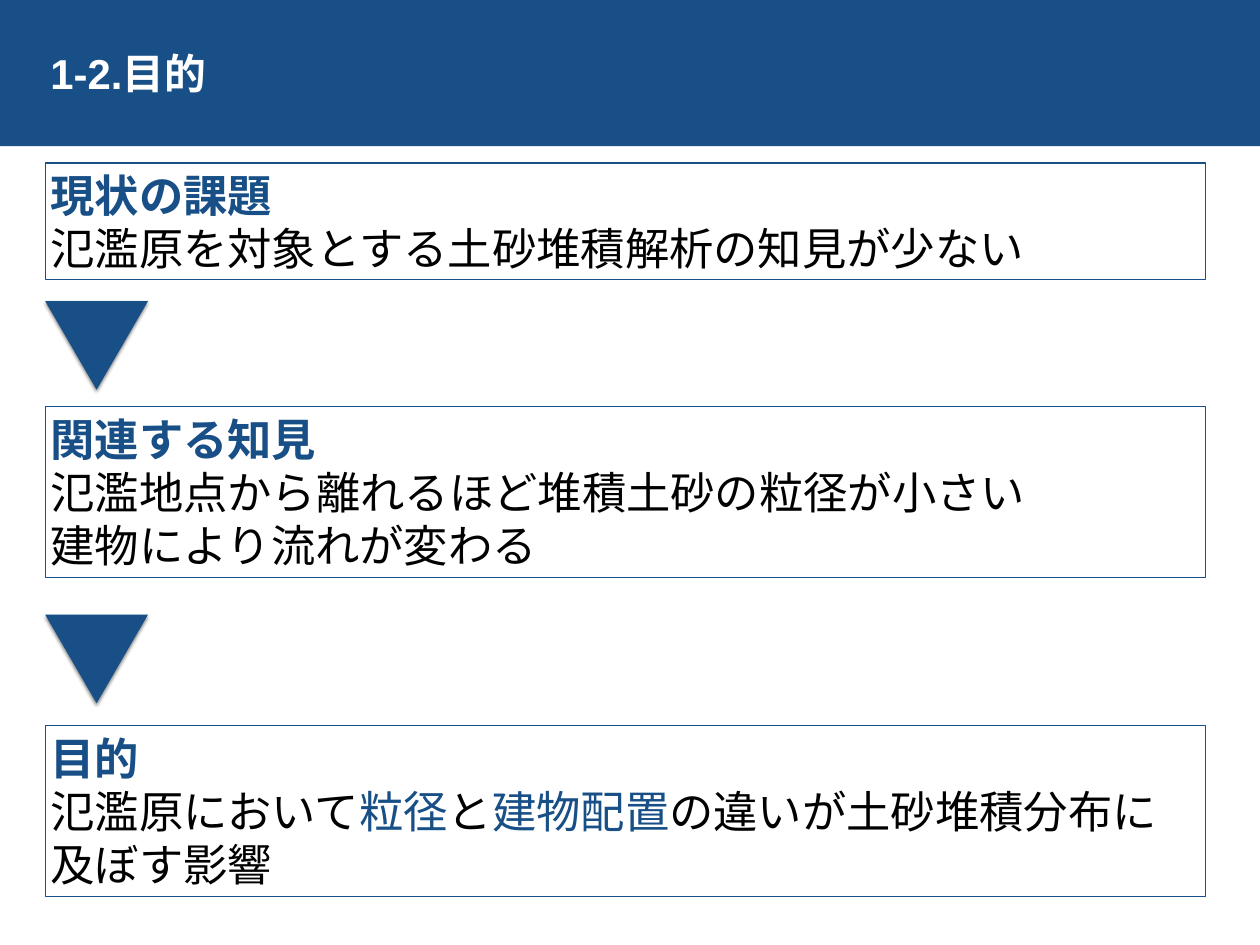
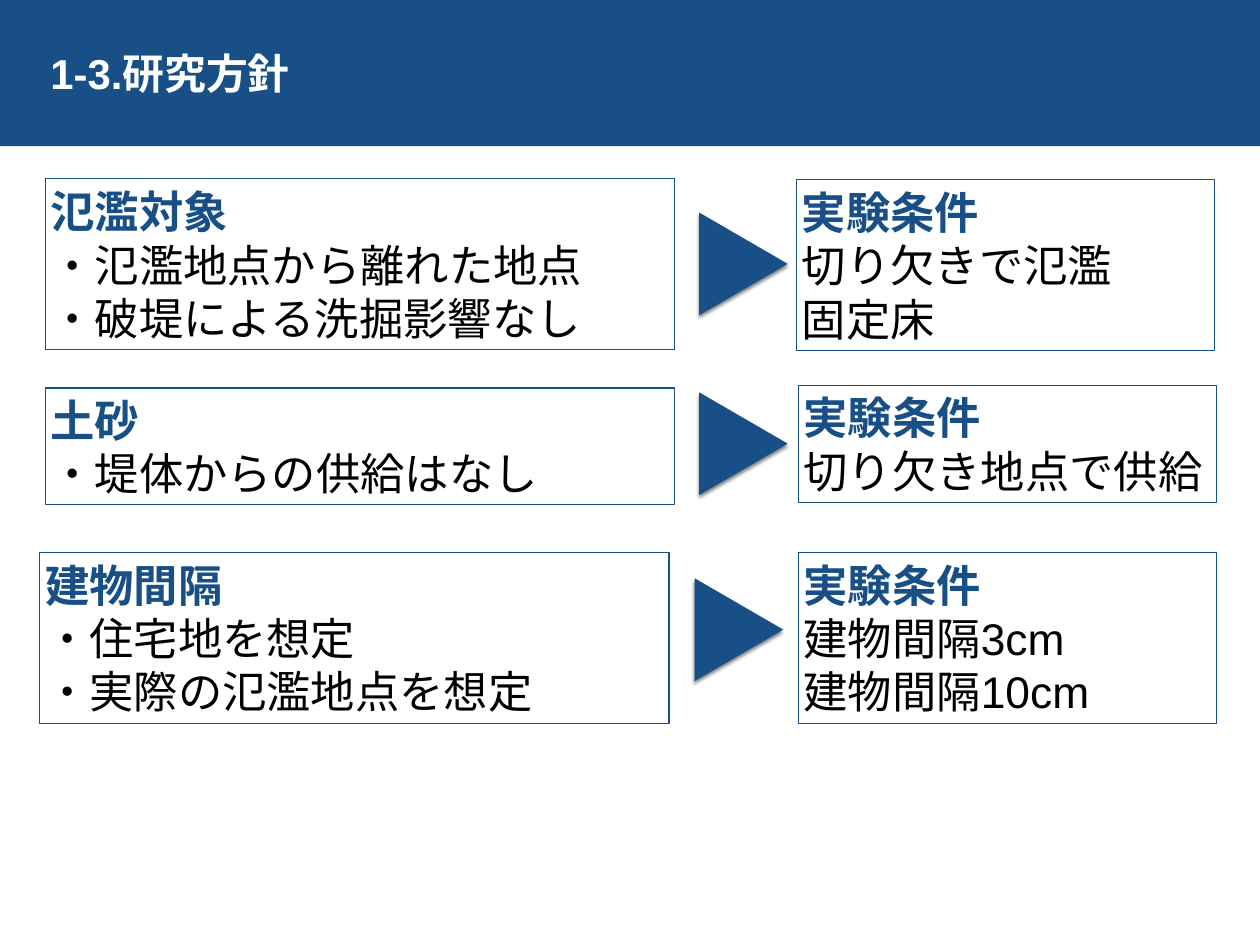
from dataclasses import dataclass

from lxml import etree
from pptx import Presentation
from pptx import util as u
from pptx.dml import color
from pptx.enum import lang, shapes, text
from pptx.oxml import ns, parse_xml

COLORS = {"blue": "174F86", "black": "000000", "white": "FFFFFF"}
FONT = "Arial"
TITLE_SIZE, BODY_SIZE = 34, 36
LEFT = 0.51
INSET = u.Inches(0.06)
DOWN, RIGHT = 180, 90
FRAME_FORMAT = {
    "margin_left": INSET,
    "margin_right": INSET,
    "margin_top": INSET,
    "margin_bottom": INSET,
    "word_wrap": True,
    "vertical_anchor": text.MSO_ANCHOR.MIDDLE,
}
SHADOW = (
    f'<a:effectLst {ns.nsdecls("a")}>'
    '<a:outerShdw blurRad="38100" dist="25400" dir="5400000" rotWithShape="0">'
    '<a:srgbClr val="000000"><a:alpha val="50000"/></a:srgbClr>'
    "</a:outerShdw></a:effectLst>"
)


@dataclass(frozen=True)
class Panel:
    """A framed box; in its lines, words between asterisks are blue."""

    left: float
    top: float
    width: float
    heading: str
    lines: tuple[str, ...]
    rows: int = 3

    @property
    def height(self) -> float:
        return round(0.1 + 0.61 * self.rows, 2)


@dataclass(frozen=True)
class Arrow:
    left: float
    top: float
    rotation: int


PURPOSE_WIDTH, TOPIC_WIDTH, CONDITION_WIDTH = 13.1, 7.1, 4.72
CONDITION = "実験条件"

SLIDES = {
    "1-2.目的": (
        Panel(LEFT, 1.84, PURPOSE_WIDTH, "現状の課題",
              ("氾濫原を対象とする土砂堆積解析の知見が少ない",), 2),
        Arrow(LEFT, 3.4, DOWN),
        Panel(LEFT, 4.59, PURPOSE_WIDTH, "関連する知見",
              ("氾濫地点から離れるほど堆積土砂の粒径が小さい", "建物により流れが変わる")),
        Arrow(LEFT, 6.94, DOWN),
        Panel(LEFT, 8.19, PURPOSE_WIDTH, "目的",
              ("氾濫原において*粒径*と*建物配置*の違いが土砂堆積分布に及ぼす影響",)),
    ),
    "1-3.研究方針": (
        Panel(LEFT, 2.02, TOPIC_WIDTH, "氾濫対象",
              ("・氾濫地点から離れた地点", "・破堤による洗掘影響なし")),
        Panel(8.99, 2.03, CONDITION_WIDTH, CONDITION, ("切り欠きで氾濫", "固定床")),
        Panel(LEFT, 4.38, TOPIC_WIDTH, "土砂", ("・堤体からの供給はなし",), 2),
        Panel(9.01, 4.35, CONDITION_WIDTH, CONDITION, ("切り欠き地点で供給",), 2),
        Arrow(7.81, 2.48, RIGHT),
        Arrow(7.81, 4.51, RIGHT),
        Panel(0.45, 6.24, TOPIC_WIDTH, "建物間隔",
              ("・住宅地を想定", "・実際の氾濫地点を想定")),
        Panel(9.01, 6.24, CONDITION_WIDTH, CONDITION, ("建物間隔3cm", "建物間隔10cm")),
        Arrow(7.76, 6.61, RIGHT),
    ),
}


def rgb(name: str) -> color.RGBColor:
    return color.RGBColor.from_string(COLORS[name])


def add_span(para, words: str, size: int, ink: str, bold: bool) -> None:
    span = para.add_run()
    span.text = words
    values = {
        "name": FONT,
        "size": u.Pt(size),
        "bold": bold,
        "language_id": lang.MSO_LANGUAGE_ID.JAPANESE,
    }
    for key, value in values.items():
        setattr(span.font, key, value)
    span.font.color.rgb = rgb(ink)
    for tag in ("a:ea", "a:cs"):
        etree.SubElement(span.font._element, ns.qn(tag), typeface=FONT)


def add_box(page, left: float, top: float, width: float, height: float):
    box = page.shapes.add_textbox(*map(u.Inches, (left, top, width, height)))
    for key, value in FRAME_FORMAT.items():
        setattr(box.text_frame, key, value)
    return box


def add_solid(page, kind, left: float, top: float, width: float, height: float):
    """Add a blue shape without outline or shadow."""
    solid = page.shapes.add_shape(kind, *map(u.Inches, (left, top, width, height)))
    solid.fill.solid()
    solid.fill.fore_color.rgb = rgb("blue")
    solid.line.fill.background()
    solid.shadow.inherit = False
    return solid


def add_title(page, title: str) -> None:
    add_solid(page, shapes.MSO_SHAPE.RECTANGLE, -0.02, 0, 14.27, 1.65)
    box = add_box(page, LEFT, 0.44, 10.58, 0.76)
    add_span(box.text_frame.paragraphs[0], title, TITLE_SIZE, "white", True)


def draw_panel(page, panel: Panel) -> None:
    box = add_box(page, panel.left, panel.top, panel.width, panel.height)
    box.line.color.rgb = rgb("blue")
    box.line.width = u.Pt(1)
    frame = box.text_frame
    frame.auto_size = text.MSO_AUTO_SIZE.SHAPE_TO_FIT_TEXT
    add_span(frame.paragraphs[0], panel.heading, BODY_SIZE, "blue", True)
    for line in panel.lines:
        para = frame.add_paragraph()
        for index, words in enumerate(line.split("*")):
            add_span(para, words, BODY_SIZE, "blue" if index % 2 else "black", False)


def draw_arrow(page, arrow: Arrow) -> None:
    triangle = add_solid(
        page, shapes.MSO_SHAPE.ISOSCELES_TRIANGLE, arrow.left, arrow.top, 1.16, 1
    )
    triangle.rotation = arrow.rotation
    properties = triangle._element.spPr
    properties.replace(properties.find(ns.qn("a:effectLst")), parse_xml(SHADOW))


def main() -> None:
    deck = Presentation()
    deck.slide_width, deck.slide_height = u.Inches(14.22), u.Inches(10.67)
    for title, items in SLIDES.items():
        page = deck.slides.add_slide(deck.slide_layouts[6])
        add_title(page, title)
        for item in items:
            if isinstance(item, Panel):
                draw_panel(page, item)
            else:
                draw_arrow(page, item)
    deck.save("out.pptx")


if __name__ == "__main__":
    main()
